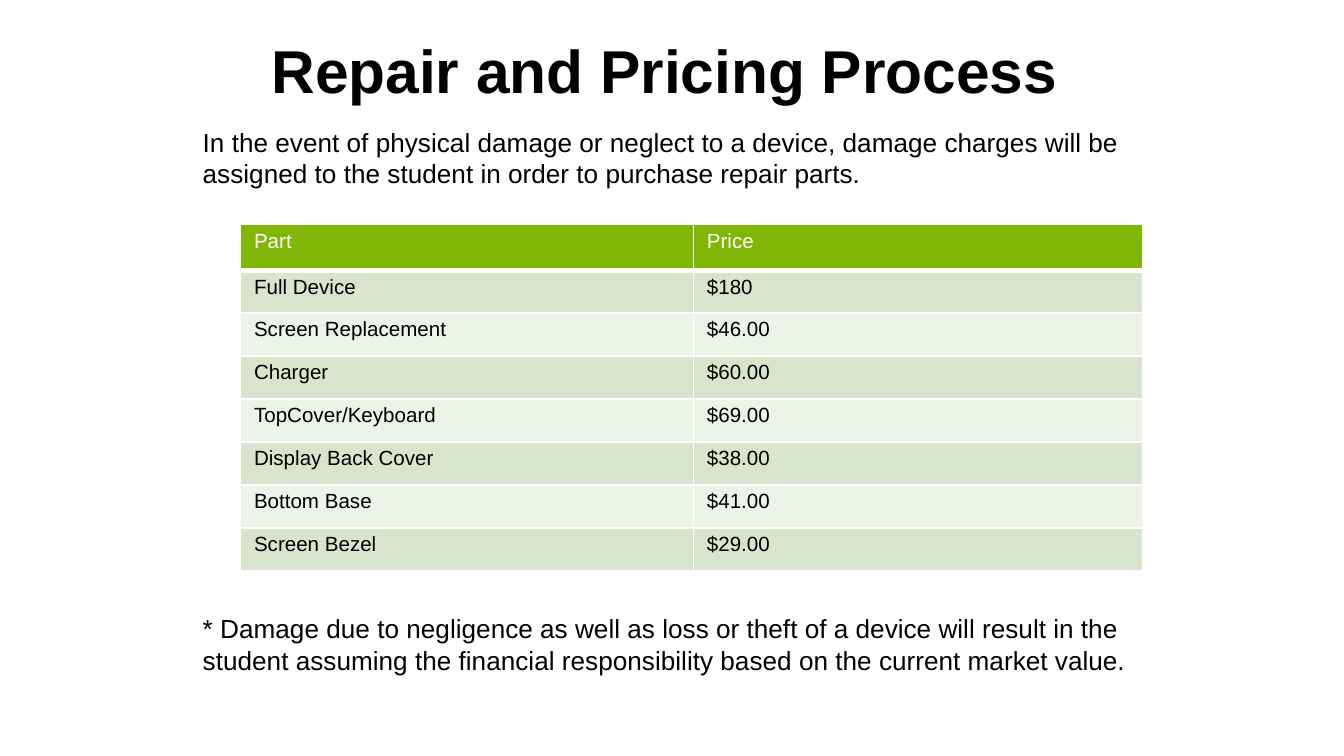
import pptx
import pptx.util
import pptx.dml.color
import pptx.enum.text
import pptx.oxml
import pptx.oxml.ns

WIDE = 10
HIGH = WIDE * 9 / 16
HUES = {"ink": "000000", "paper": "FFFFFF", "head": "80B606",
        "dark": "D8E5CC", "light": "EDF3E7"}
ROWS = [("Part", "Price"), ("Full Device", "$180"),
        ("Screen Replacement", "$46.00"), ("Charger", "$60.00"),
        ("TopCover/Keyboard", "$69.00"), ("Display Back Cover", "$38.00"),
        ("Bottom Base", "$41.00"), ("Screen Bezel", "$29.00")]
INTRO = ("In the event of physical damage or neglect to a device, damage "
         "charges will be assigned to the student in order to purchase "
         "repair parts.")
NOTE = ("* Damage due to negligence as well as loss or theft of a device "
        "will result in the student assuming the financial responsibility "
        "based on the current market value.")


def inch(box):
    """Turn a box in inches into lengths."""
    return [pptx.util.Inches(part) for part in box]


def apply(thing, looks):
    """Set each named value on an object."""
    for name, value in looks.items():
        setattr(thing, name, value)


def hue(name):
    """Look up a colour by name."""
    return pptx.dml.color.RGBColor.from_string(HUES[name])


def write(frame, text, size, tint="ink", bold=False, align=None):
    """Put one styled paragraph in a text frame."""
    frame.text = text
    line = frame.paragraphs[0]
    line.alignment = align
    apply(line.font, {"name": "Arial", "size": pptx.util.Pt(size), "bold": bold})
    line.font.color.rgb = hue(tint)


def title(slide, box, text):
    """Place the slide title."""
    shape = slide.shapes.title
    apply(shape, dict(zip(("left", "top", "width", "height"), inch(box))))
    frame = shape.text_frame
    pad = pptx.util.Inches(0.1)
    apply(frame, {"vertical_anchor": pptx.enum.text.MSO_ANCHOR.BOTTOM,
                  "auto_size": pptx.enum.text.MSO_AUTO_SIZE.NONE,
                  "margin_left": pad, "margin_right": pad,
                  "margin_top": pad, "margin_bottom": pad})
    write(frame, text, 32.4, bold=True, align=pptx.enum.text.PP_ALIGN.CENTER)


def prose(slide, box, text):
    """Place a wrapped block of text."""
    frame = slide.shapes.add_textbox(*inch(box)).text_frame
    apply(frame, {"word_wrap": True,
                  "auto_size": pptx.enum.text.MSO_AUTO_SIZE.SHAPE_TO_FIT_TEXT})
    write(frame, text, 14)


def edge(cell, base):
    """Draw white borders round a cell, with its own base width."""
    props = cell._tc.get_or_add_tcPr()
    for side, width in {"L": 1, "R": 1, "T": 1, "B": base}.items():
        props.append(pptx.oxml.parse_xml(
            f'<a:ln{side} {pptx.oxml.ns.nsdecls("a")} w="{pptx.util.Pt(width)}">'
            f'<a:solidFill><a:srgbClr val="{HUES["paper"]}"/></a:solidFill>'
            f'</a:ln{side}>'))


def prices(slide, box, rows):
    """Place the price table with a header and banded rows."""
    left, top, width, height = box
    grid = slide.shapes.add_table(len(rows), 2, *inch(box)).table
    for col, size in zip(grid.columns, (3.37, width - 3.37)):
        col.width = pptx.util.Inches(size)
    first = 0.34
    rest = (height - first) / (len(rows) - 1)
    for r, texts in enumerate(rows):
        grid.rows[r].height = pptx.util.Inches(rest if r else first)
        band = ("light", "dark")[r % 2] if r else "head"
        for c, text in enumerate(texts):
            cell = grid.cell(r, c)
            apply(cell, dict(zip(
                ("margin_left", "margin_top", "margin_right", "margin_bottom"),
                inch((0.1, 0.04, 0.1, 0.04)))))
            edge(cell, 1 if r else 3)
            cell.fill.solid()
            cell.fill.fore_color.rgb = hue(band)
            write(cell.text_frame, text, 11, "ink" if r else "paper")


def main():
    """Build and save the slide."""
    deck = pptx.Presentation()
    deck.slide_width, deck.slide_height = inch((WIDE, HIGH))
    slide = deck.slides.add_slide(deck.slide_layouts[5])
    left, right = 0.141 * WIDE, 0.85 * WIDE
    title(slide, (0.39, 0.11, 9.11, 0.78), "Repair and Pricing Process")
    prices(slide, (1.79, 1.67, right - 1.79, 2.58), ROWS)
    prose(slide, (left, 4.51, right - left, 0.57), NOTE)
    prose(slide, (left, 0.89, 7.55, 0.57), INTRO)
    deck.save("out.pptx")


if __name__ == "__main__":
    main()
